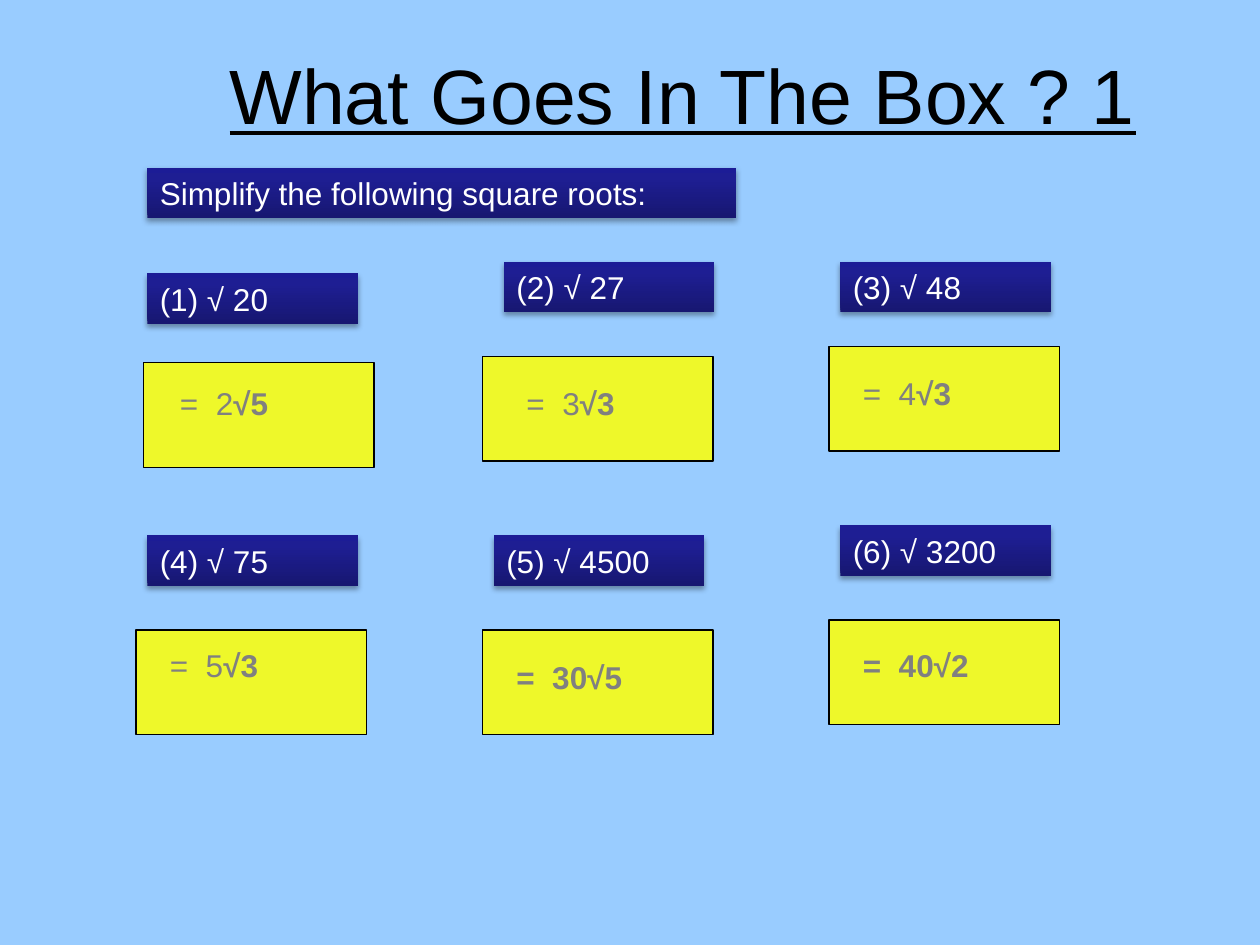
import copy

import lxml.etree
import pptx
import pptx.dml.color
import pptx.enum.shapes
import pptx.enum.text
import pptx.oxml.ns
import pptx.util

Inches = pptx.util.Inches
ALIGN = pptx.enum.text.PP_ALIGN
ANCHOR = pptx.enum.text.MSO_ANCHOR

THEME = {
    "font": "Arial",
    "title_size": 44,
    "text_size": 18,
    "sky": "99CCFF",
    "black": "000000",
    "white": "FFFFFF",
    "answer": "808080",
    "box": "EEF82A",
    "banner": ((0, "171771"), (0.8, "1E1E93"), (1, "1C1C96")),
}

TITLE = "What Goes In The Box ? 1"
INSTRUCTION = "Simplify the following square roots:"

# Question, its place; box place; answer as (plain, bold) text, its place
QUESTIONS = [
    ("(1) √ 20", (1.17, 2.17), (1.14, 2.88), ("=  2", "√5"), (1.33, 3)),
    ("(2) √ 27", (4, 2.08), (3.83, 2.83), ("=  3", "√3"), (4.08, 3)),
    ("(3) √ 48", (6.67, 2.08), (6.58, 2.75), ("=  4", "√3"), (6.75, 2.92)),
    ("(4) √ 75", (1.17, 4.25), (1.08, 5), ("=  5", "√3"), (1.25, 5.08)),
    ("(5) √ 4500", (3.92, 4.25), (3.83, 5), ("", "=  30√5"), (4, 5.17)),
    ("(6) √ 3200", (6.67, 4.17), (6.58, 4.92), ("", "=  40√2"), (6.75, 5.08)),
]
INSTRUCTION_PLACE = (1.17, 1.33)
INSTRUCTION_SIZE = (4.67, 0.4)
QUESTION_SIZE = (1.67, 0.4)
BOX_SIZE = (1.83, 0.83)
ANSWER_SIZE = (1.25, 0.5)


def rgb(name):
    return pptx.dml.color.RGBColor.from_string(THEME.get(name, name))


def frame(place, size):
    return [Inches(value) for value in (*place, *size)]


def format_span(span, color, size="text_size", bold=False):
    span.font.name = THEME["font"]
    span.font.size = pptx.util.Pt(THEME[size])
    span.font.color.rgb = rgb(color)
    span.font.bold = bold


def add_rectangle(page, place, size):
    kind = pptx.enum.shapes.MSO_SHAPE.RECTANGLE
    box = page.shapes.add_shape(kind, *frame(place, size))
    box.shadow.inherit = False
    return box


def fill_gradient(box):
    """Give the box the three-colour banner gradient, darkest at the bottom."""
    box.fill.gradient()
    box.fill.gradient_angle = 90
    stop_list = box.element.spPr.find(".//" + pptx.oxml.ns.qn("a:gsLst"))
    stop_list.append(copy.deepcopy(stop_list[0]))
    for stop, (position, color) in zip(box.fill.gradient_stops, THEME["banner"]):
        stop.position = position
        stop.color.rgb = rgb(color)


def add_soft_shadow(box):
    qn = pptx.oxml.ns.qn
    effects = box.element.spPr.find(qn("a:effectLst"))
    shadow = lxml.etree.SubElement(
        effects, qn("a:outerShdw"), blurRad=str(pptx.util.Pt(3.1)),
        dist=str(pptx.util.Pt(1.8)), dir="5400000", rotWithShape="0")
    color = lxml.etree.SubElement(shadow, qn("a:srgbClr"), val=THEME["black"])
    lxml.etree.SubElement(color, qn("a:alpha"), val="35000")


def add_banner(page, text, place, size):
    box = add_rectangle(page, place, size)
    fill_gradient(box)
    box.line.fill.background()
    add_soft_shadow(box)
    box.text_frame.text = text
    box.text_frame.word_wrap = True
    box.text_frame.vertical_anchor = ANCHOR.TOP
    para = box.text_frame.paragraphs[0]
    para.alignment = ALIGN.LEFT
    format_span(para.runs[0], "white")


def add_answer_box(page, place):
    box = add_rectangle(page, place, BOX_SIZE)
    box.fill.solid()
    box.fill.fore_color.rgb = rgb("box")
    box.line.color.rgb = rgb("black")
    box.line.width = pptx.util.Pt(0.75)


def add_answer(page, parts, place):
    box = page.shapes.add_textbox(*frame(place, ANSWER_SIZE))
    box.text_frame.word_wrap = True
    para = box.text_frame.paragraphs[0]
    for text, bold in zip(parts, (False, True)):
        if text:
            span = para.add_run()
            span.text = text
            format_span(span, "answer", bold=bold)


def add_title(page):
    title = page.shapes.title
    title.left, title.top, title.width, title.height = frame((1.17, 0.33), (8.5, 0.83))
    title.text_frame.text = TITLE
    title.text_frame.vertical_anchor = ANCHOR.MIDDLE
    para = title.text_frame.paragraphs[0]
    para.alignment = ALIGN.CENTER
    format_span(para.runs[0], "black", "title_size")
    para.runs[0].font.underline = True


def main():
    deck = pptx.Presentation()
    deck.slide_width, deck.slide_height = Inches(10), Inches(7.5)
    page = deck.slides.add_slide(deck.slide_layouts.get_by_name("Title Only"))
    page.background.fill.solid()
    page.background.fill.fore_color.rgb = rgb("sky")

    add_title(page)
    add_banner(page, INSTRUCTION, INSTRUCTION_PLACE, INSTRUCTION_SIZE)
    for question, question_place, box_place, answer, answer_place in QUESTIONS:
        add_banner(page, question, question_place, QUESTION_SIZE)
        add_answer_box(page, box_place)
        add_answer(page, answer, answer_place)
    deck.save("out.pptx")


if __name__ == "__main__":
    main()
